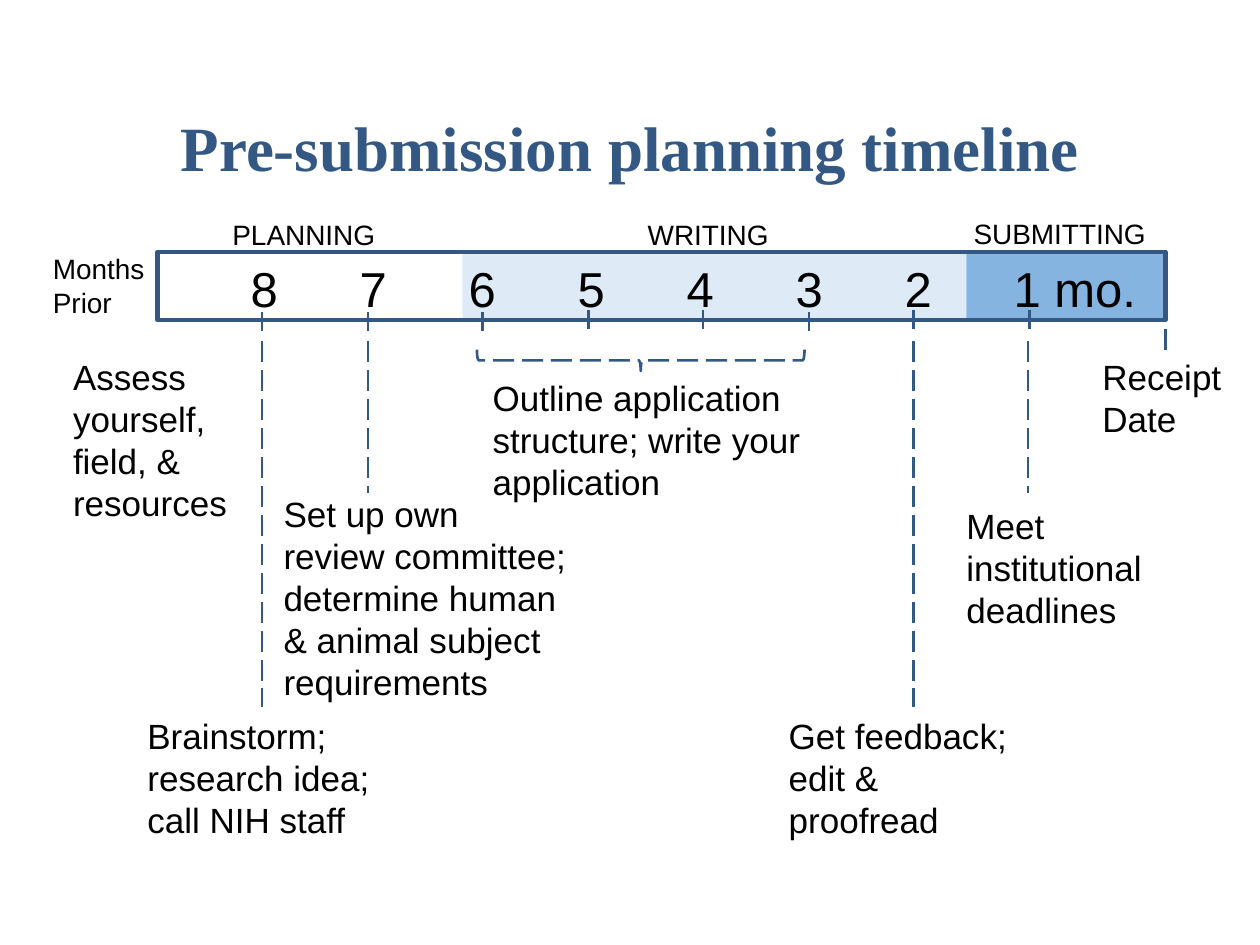
from lxml.etree import SubElement
from pptx import Presentation
from pptx.dml.color import RGBColor
from pptx.enum.dml import MSO_LINE_DASH_STYLE as Dash
from pptx.enum.shapes import MSO_CONNECTOR as Connector, MSO_SHAPE as Shape
from pptx.enum.text import MSO_ANCHOR as Anchor, PP_ALIGN as Align
from pptx.oxml.ns import qn
from pptx.util import Inches, Pt

NAVY = RGBColor(0x34, 0x58, 0x84)
PALE_BLUE = RGBColor(0xDE, 0xEB, 0xF7)
MID_BLUE = RGBColor(0x5B, 0x9B, 0xD5)
BLACK = RGBColor(0, 0, 0)

TITLE = "Pre-submission planning timeline"
MONTHS = ["8", "7", "6", "5", "4", "3", "2", "1 mo."]
BAR_LEFT, BAR_TOP, BAR_WIDTH, BAR_HEIGHT = 1.25, 2, 8, 0.54
FIRST_MONTH, MONTH_STEP = 0.74, 0.865

# name, left, label top, width, fill, opacity in percent
PHASES = [
    ("PLANNING", 1.25, 1.73, 2.42, None, 100),
    ("WRITING", 3.67, 1.73, 4, PALE_BLUE, 100),
    ("SUBMITTING", 7.67, 1.72, 1.58, MID_BLUE, 75),
]
# text, left, top, width, height
NOTES = [
    ("Receipt\nDate", 8.75, 2.82, 1, 0.67),
    ("Assess\nyourself, field, & resources", 0.58, 2.82, 1.33, 1.35),
    ("Brainstorm; research idea; call NIH staff", 1.17, 5.67, 1.83, 1.01),
    ("Set up own review committee; determine human & animal subject requirements",
     2.25, 3.91, 2.25, 1.68),
    ("Outline application structure; write your application", 3.91, 2.99, 2.54, 1.01),
    ("Get feedback; edit & proofread", 6.26, 5.67, 1.98, 0.67),
    ("Meet institutional deadlines", 7.67, 4, 1.46, 1.01),
]
# x, top
TICKS = [(2.08, 2.48), (2.92, 2.48), (3.83, 2.48), (4.67, 2.46),
         (5.58, 2.46), (6.42, 2.48), (7.25, 2.46), (8.17, 2.46)]
TICK_LENGTH = 0.15
# x, top, bottom
LEADERS = [(2.08, 2.71, 5.61), (2.92, 2.71, 3.91), (7.25, 2.71, 5.61),
           (8.16, 2.71, 3.91), (9.25, 2.61, 2.81)]


def set_text(shape, text, size, align=Align.LEFT, right_inset=0.0):
    frame = shape.text_frame
    frame.word_wrap = True
    frame.vertical_anchor = Anchor.TOP
    frame.margin_left = frame.margin_top = frame.margin_bottom = 0
    frame.margin_right = Inches(right_inset)
    frame.text = text
    for paragraph in frame.paragraphs:
        paragraph.alignment = align
        for run in paragraph.runs:
            run.font.name = "Arial"
            run.font.size = Pt(size)
            run.font.color.rgb = BLACK


def add_text(slide, text, left, top, width, height, size, **options):
    box = slide.shapes.add_textbox(*map(Inches, (left, top, width, height)))
    set_text(box, text, size, **options)


def add_outline(slide, kind, left, top, width, height, weight):
    """Add an unfilled, navy-lined shape."""
    shape = slide.shapes.add_shape(kind, *map(Inches, (left, top, width, height)))
    shape.shadow.inherit = False
    shape.fill.background()
    shape.line.color.rgb = NAVY
    shape.line.width = Pt(weight)
    return shape


def add_vertical(slide, x, top, bottom, dash=None):
    line = slide.shapes.add_connector(
        Connector.STRAIGHT, *map(Inches, (x, top, x, bottom)))
    line.line.color.rgb = NAVY
    line.line.width = Pt(1.5)
    line.line.dash_style = dash
    SubElement(line._element.spPr, qn("a:effectLst"))


def add_phase_fill(slide, left, width, color, opacity):
    band = add_outline(slide, Shape.RECTANGLE, left, BAR_TOP, width, BAR_HEIGHT, 1)
    band.line.fill.background()
    band.fill.solid()
    band.fill.fore_color.rgb = color
    if opacity < 100:
        color_element = band._element.spPr.find(".//" + qn("a:srgbClr"))
        SubElement(color_element, qn("a:alpha"), val=str(opacity * 1000))


def add_month_bar(slide):
    bar = add_outline(slide, Shape.RECTANGLE, BAR_LEFT, BAR_TOP, BAR_WIDTH, BAR_HEIGHT, 2.5)
    set_text(bar, "".join("\t" + month for month in MONTHS), 28)
    paragraph = bar.text_frame.paragraphs[0]
    paragraph.space_before = Pt(4)
    bar.text_frame.margin_top = Inches(0.05)
    tabs = SubElement(paragraph._p.get_or_add_pPr(), qn("a:tabLst"))
    for index in range(len(MONTHS)):
        position = Inches(FIRST_MONTH + index * MONTH_STEP)
        SubElement(tabs, qn("a:tab"), pos=str(position), algn="l")


def add_title(slide):
    title = slide.shapes.title
    title.left, title.top, title.width, title.height = map(Inches, (0.29, 0.75, 9.42, 0.9))
    title.text_frame.text = TITLE
    title.text_frame.vertical_anchor = Anchor.MIDDLE
    paragraph = title.text_frame.paragraphs[0]
    paragraph.alignment = Align.CENTER
    paragraph.line_spacing = 0.9
    font = paragraph.runs[0].font
    font.name, font.size, font.bold = "Times New Roman", Pt(36), True
    font.color.rgb = NAVY


def main():
    presentation = Presentation()
    presentation.slide_width, presentation.slide_height = Inches(10), Inches(7.5)
    slide = presentation.slides.add_slide(presentation.slide_layouts[5])
    add_title(slide)

    for name, left, top, width, color, opacity in PHASES:
        if color is not None:
            add_phase_fill(slide, left, width, color, opacity)
        add_text(slide, name, left, top, width, 0.27, 16,
                 align=Align.CENTER, right_inset=0.1)
    add_month_bar(slide)
    add_text(slide, "Months Prior", 0.42, BAR_TOP, 0.83, BAR_HEIGHT, 16, right_inset=0.1)

    for x, top in TICKS:
        add_vertical(slide, x, top, top + TICK_LENGTH)
    for x, top, bottom in LEADERS:
        add_vertical(slide, x, top, bottom, Dash.LONG_DASH)

    brace = add_outline(slide, Shape.RIGHT_BRACE, 5, 1.56, 0.17, 2.6, 1.5)
    brace.rotation = 90
    brace.line.dash_style = Dash.LONG_DASH

    for text, *box in NOTES:
        add_text(slide, text, *box, 20)
    presentation.save("out.pptx")


if __name__ == "__main__":
    main()
